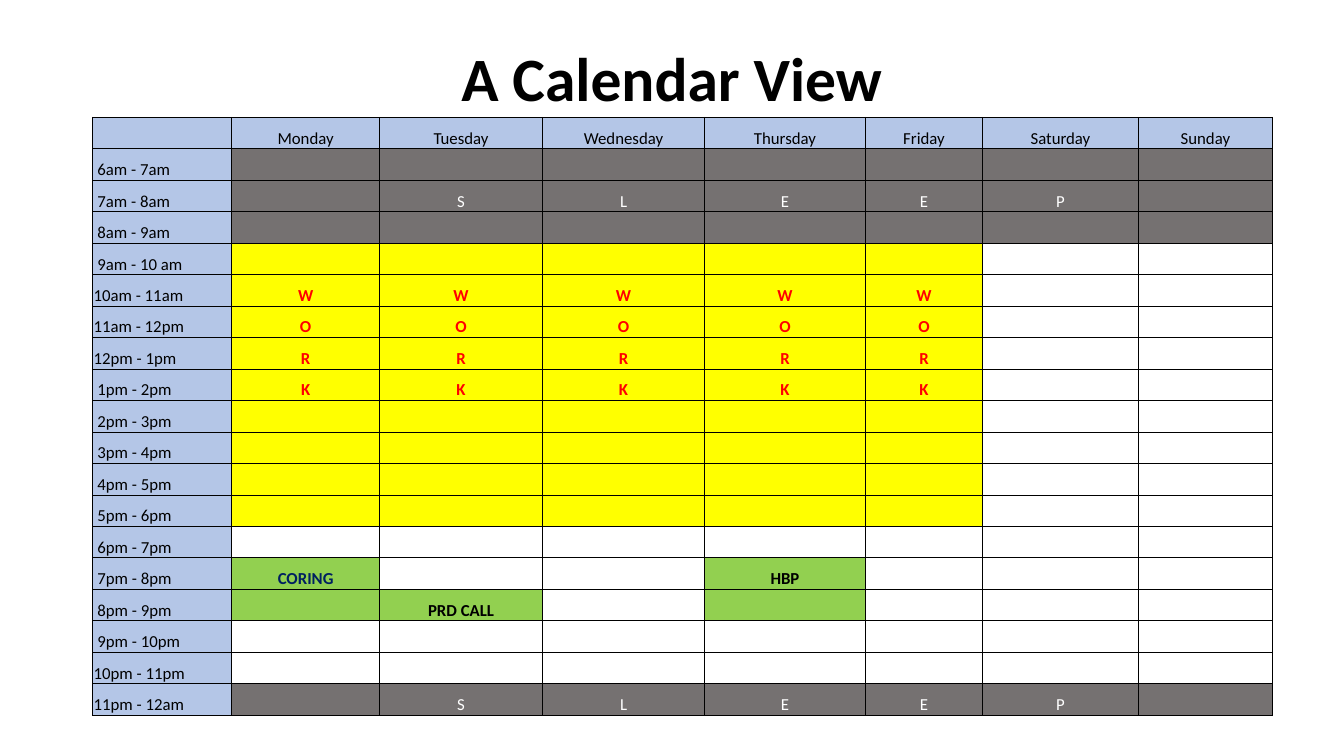
from dataclasses import dataclass

from pptx import Presentation
from pptx import util as u
from pptx.dml import color
from pptx.enum import text
from pptx.oxml import parse_xml
from pptx.oxml import ns


@dataclass(frozen=True)
class Theme:
    font: str = "Calibri"
    title_size: float = 44
    cell_size: float = 12
    border_width: float = 0.5
    ink: str = "000000"
    header: str = "B4C6E7"
    sleep: str = "757171"
    sleep_ink: str = "FFFFFF"
    work: str = "FFFF00"
    work_ink: str = "FF0000"
    event: str = "92D050"
    event_ink: str = "002060"


THEME = Theme()

DAYS = ["Monday", "Tuesday", "Wednesday", "Thursday", "Friday", "Saturday", "Sunday"]
HOURS = [
    " 6am - 7am", " 7am - 8am", " 8am - 9am", " 9am - 10 am", "10am - 11am",
    "11am - 12pm", "12pm - 1pm", " 1pm - 2pm", " 2pm - 3pm", " 3pm - 4pm",
    " 4pm - 5pm", " 5pm - 6pm", " 6pm - 7pm", " 7pm - 8pm", " 8pm - 9pm",
    " 9pm - 10pm", "10pm - 11pm", "11pm - 12am",
]
COLUMN_WIDTHS = [99.3, 105.7, 116.4, 115.7, 115, 83.6, 111.4, 95.7]
ROW_HEIGHT = 22.5

# Rows and columns of the table; row 0 holds the days, column 0 the hours
SLEEP_ROWS = {1, 2, 3, 18}
SLEEP_WORD_ROWS = {2, 18}
SLEEP_LETTERS = dict(enumerate("SLEEP", start=2))
WORK_ROWS = range(4, 13)
WORK_COLUMNS = range(1, 6)
WORK_LETTERS = dict(enumerate("WORK", start=5))
EVENTS = {
    (14, 1): ("CORING", THEME.event_ink),
    (15, 1): ("", THEME.ink),
    (15, 2): ("PRD CALL", THEME.ink),
    (14, 4): ("HBP", THEME.ink),
    (15, 4): ("", THEME.ink),
}


def style_span(span, size, ink, bold):
    span.font.name = THEME.font
    span.font.size = u.Pt(size)
    span.font.bold = bold
    span.font.color.rgb = color.RGBColor.from_string(ink)


def add_title(page, left, top, width, height, words):
    box = page.shapes.add_textbox(u.Pt(left), u.Pt(top), u.Pt(width), u.Pt(height))
    frame = box.text_frame
    frame.word_wrap = True
    frame.vertical_anchor = text.MSO_ANCHOR.MIDDLE
    frame.text = words
    para = frame.paragraphs[0]
    para.alignment = text.PP_ALIGN.CENTER
    para.line_spacing = 0.9
    style_span(para.runs[0], THEME.title_size, THEME.ink, True)


def describe_cell(row, column):
    """Return the words, fill, ink and weight of one calendar cell."""
    if row == 0 or column == 0:
        words = HOURS[row - 1] if row else DAYS[column - 1] if column else ""
        return words, THEME.header, THEME.ink, False
    if row in SLEEP_ROWS:
        words = SLEEP_LETTERS.get(column, "") if row in SLEEP_WORD_ROWS else ""
        return words, THEME.sleep, THEME.sleep_ink, False
    if row in WORK_ROWS and column in WORK_COLUMNS:
        return WORK_LETTERS.get(row, ""), THEME.work, THEME.work_ink, True
    if (row, column) in EVENTS:
        words, ink = EVENTS[row, column]
        return words, THEME.event, ink, True
    return "", None, THEME.ink, False


def add_borders(cell):
    properties = cell._tc.get_or_add_tcPr()
    for side in ("lnL", "lnR", "lnT", "lnB"):
        properties.append(parse_xml(
            f'<a:{side} {ns.nsdecls("a")} w="{u.Pt(THEME.border_width)}">'
            f'<a:solidFill><a:srgbClr val="{THEME.ink}"/></a:solidFill></a:{side}>'))


def fill_cell(cell, words, fill, ink, bold, alignment):
    cell.margin_left = cell.margin_right = cell.margin_top = u.Pt(0.7)
    cell.margin_bottom = u.Pt(0)
    cell.vertical_anchor = text.MSO_ANCHOR.BOTTOM
    # Borders come before the fill in the cell's properties
    add_borders(cell)
    if fill:
        cell.fill.solid()
        cell.fill.fore_color.rgb = color.RGBColor.from_string(fill)
    else:
        cell.fill.background()
    para = cell.text_frame.paragraphs[0]
    para.alignment = alignment
    if words:
        para.text = words
        style_span(para.runs[0], THEME.cell_size, ink, bold)
    else:
        # Small end mark keeps an empty row from growing
        para._p.get_or_add_endParaRPr().set("sz", str(THEME.cell_size * 100))


def add_calendar(page, left, top):
    row_count, column_count = len(HOURS) + 1, len(DAYS) + 1
    table = page.shapes.add_table(
        row_count, column_count, u.Pt(left), u.Pt(top),
        u.Pt(sum(COLUMN_WIDTHS)), u.Pt(ROW_HEIGHT * row_count)).table
    table.first_row = table.horz_banding = False
    for column, width in zip(table.columns, COLUMN_WIDTHS):
        column.width = u.Pt(width)
    for row in range(row_count):
        table.rows[row].height = u.Pt(ROW_HEIGHT)
        for column in range(column_count):
            alignment = text.PP_ALIGN.CENTER if column else text.PP_ALIGN.LEFT
            fill_cell(table.cell(row, column), *describe_cell(row, column), alignment)


def main():
    deck = Presentation()
    deck.slide_width, deck.slide_height = u.Pt(960), u.Pt(540)
    page = deck.slides.add_slide(deck.slide_layouts[6])
    add_title(page, 66, 28.8, 828, 59, "A Calendar View")
    add_calendar(page, 66.2, 83.7)
    deck.save("out.pptx")


if __name__ == "__main__":
    main()
